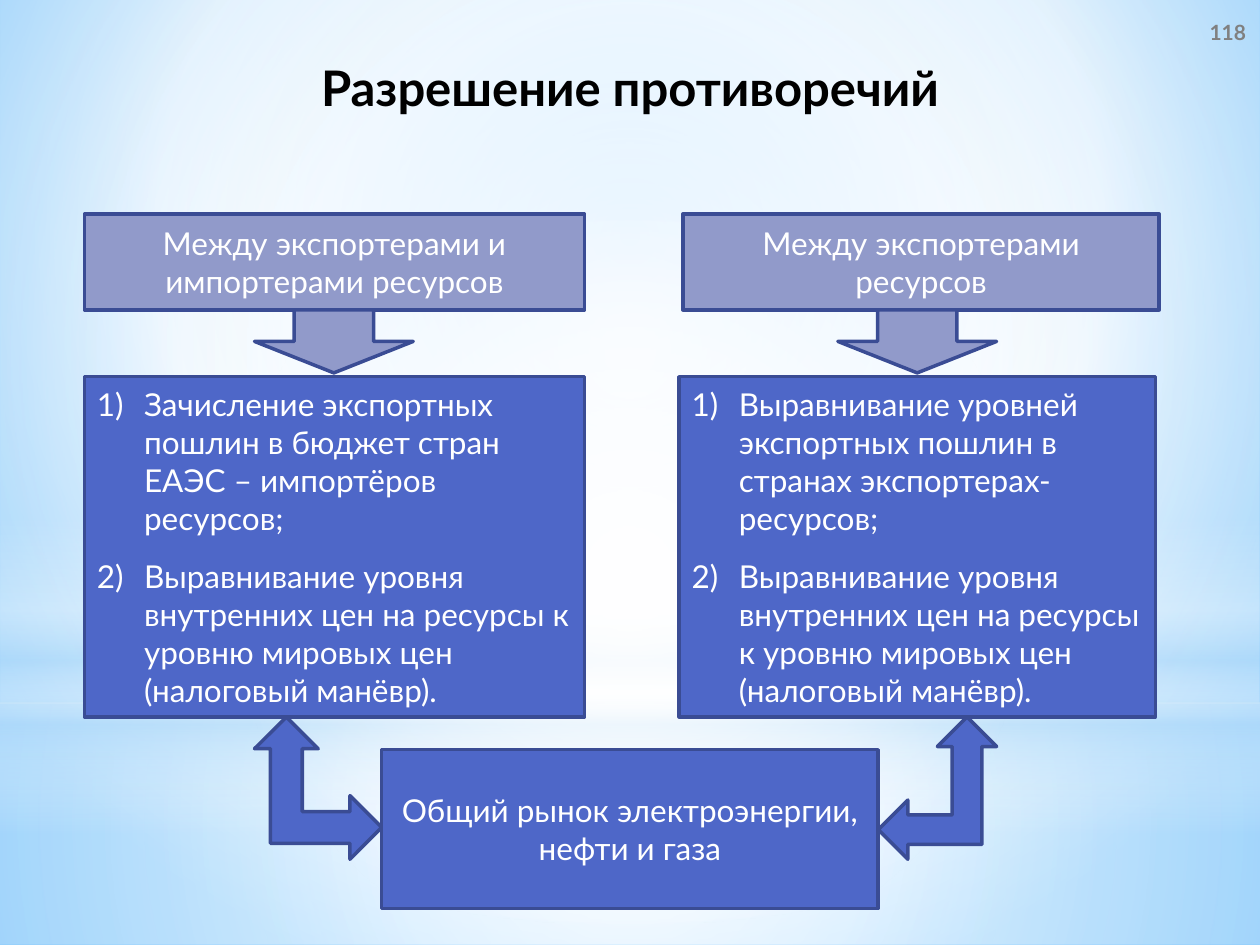
"""Build the slide on resolving contradictions between resource exporters and importers."""
import pptx
import pptx.util
import pptx.dml.color
import pptx.enum.shapes
import pptx.enum.text
import pptx.oxml.ns
from lxml import etree

Pt = pptx.util.Pt
RGBColor = pptx.dml.color.RGBColor
SHAPE = pptx.enum.shapes.MSO_SHAPE
ALIGN = pptx.enum.text.PP_ALIGN
ANCHOR = pptx.enum.text.MSO_ANCHOR
qn = pptx.oxml.ns.qn

WHITE = RGBColor(0xFF, 0xFF, 0xFF)
BLACK = RGBColor(0, 0, 0)
GRAY = RGBColor(0x80, 0x80, 0x80)
BLUE = RGBColor(0x4E, 0x67, 0xC8)
LILAC = RGBColor(0x91, 0x9A, 0xCA)
NAVY = RGBColor(0x3A, 0x4C, 0x94)
PALE = RGBColor(0xB4, 0xDC, 0xFA)
SKY = RGBColor(0x9E, 0xD5, 0xFF)
AZURE = RGBColor(0x5B, 0xB9, 0xFF)

WIDTH, HEIGHT = 720, 540
FONT = "Lato"
CENTER_FOCUS = (50, 50, 50, 50)

BACKDROP = [(0, SKY, 100), (60, WHITE, 100), (100, AZURE, 100)]
GLOWS = [
    (SHAPE.RECTANGLE, 401.76, 138.24, CENTER_FOCUS,
     [(0, WHITE, 91), (37, WHITE, 76), (100, PALE, 79)]),
    (SHAPE.RECTANGLE, 0, 401.76, CENTER_FOCUS,
     [(0, WHITE, 89), (48, WHITE, 62), (100, PALE, 79)]),
    (SHAPE.RECTANGLE, 296.64, 180, None,
     [(0, WHITE, 0), (29, WHITE, 30), (45, PALE, 40),
      (55, WHITE, 26), (65, PALE, 60), (100, WHITE, 0)]),
    (SHAPE.OVAL, 126, 401.76, CENTER_FOCUS, [(0, WHITE, 100), (56, WHITE, 0)]),
]

TITLE = "Разрешение противоречий"
PAGE_NUMBER = "118"
PRICES = "Выравнивание уровня внутренних цен на ресурсы к уровню мировых цен (налоговый манёвр)."
COLUMNS = [
    {"heading": "Между экспортерами и импортерами ресурсов",
     "measures": ["Зачисление экспортных пошлин в бюджет стран ЕАЭС – импортёров ресурсов;", PRICES],
     "heading_left": 48.24, "measures_left": 48.24, "width": 285.84, "arrow_left": 145.44},
    {"heading": "Между экспортерами ресурсов",
     "measures": ["Выравнивание уровней экспортных пошлин в странах экспортерах-ресурсов;", PRICES],
     "heading_left": 390.24, "measures_left": 388.08, "width": 272.16, "arrow_left": 478.8},
]
RESULT = "Общий рынок электроэнергии, нефти и газа"

HEADING_TOP, HEADING_HEIGHT = 122.4, 54.72
ARROW_WIDTH, ARROW_HEIGHT = 90.72, 36
MEASURES_TOP, MEASURES_HEIGHT = 215.28, 194.4
RESULT_AREA = (218.16, 428.4, 283.68, 90.72)
BENT_ARROWS = [((501.84, 409.68, 67.68, 81.36), 0), ((141.12, 414, 81.36, 72.72), 90)]


def apply_gradient(fill, element, stops, focus):
    fill.gradient()
    gradient = next(element.iter(qn("a:gradFill")))
    for child in list(gradient):
        gradient.remove(child)
    stop_list = etree.SubElement(gradient, qn("a:gsLst"))
    for position, color, opacity in stops:
        stop = etree.SubElement(stop_list, qn("a:gs"), pos=str(position * 1000))
        tint = etree.SubElement(stop, qn("a:srgbClr"), val=str(color))
        if opacity < 100:
            etree.SubElement(tint, qn("a:alpha"), val=str(opacity * 1000))
    if focus:
        shade = etree.SubElement(gradient, qn("a:path"), path="circle")
        sides = {side: str(share * 1000) for side, share in zip("ltrb", focus)}
        etree.SubElement(shade, qn("a:fillToRect"), **sides)
    else:
        etree.SubElement(gradient, qn("a:lin"), ang="5400000", scaled="0")


def write(box, texts, size=18, color=WHITE, bold=False, align=ALIGN.CENTER,
          anchor=ANCHOR.MIDDLE, after=0, numbered=False):
    frame = box.text_frame
    frame.word_wrap = True
    frame.vertical_anchor = anchor
    for index, text in enumerate(texts):
        para = frame.add_paragraph() if index else frame.paragraphs[0]
        para.alignment = align
        para.space_after = Pt(after)
        if numbered:
            properties = para._p.get_or_add_pPr()
            properties.set("marL", str(Pt(27)))
            properties.set("indent", str(Pt(-27)))
            etree.SubElement(properties, qn("a:buFont"), typeface=FONT)
            etree.SubElement(properties, qn("a:buAutoNum"), type="arabicParenR")
        span = para.add_run()
        span.text = text
        span.font.name = FONT
        span.font.size = Pt(size)
        span.font.bold = bold
        span.font.color.rgb = color


def add_shape(page, kind, area, color=None):
    shape = page.shapes.add_shape(kind, *map(Pt, area))
    shape.shadow.inherit = False
    if color is None:
        shape.line.fill.background()
    else:
        shape.fill.solid()
        shape.fill.fore_color.rgb = color
        shape.line.color.rgb = NAVY
        shape.line.width = Pt(2)
    return shape


def main():
    deck = pptx.Presentation()
    deck.slide_width, deck.slide_height = Pt(WIDTH), Pt(HEIGHT)
    page = deck.slides.add_slide(deck.slide_layouts[6])
    apply_gradient(page.background.fill, page.element, BACKDROP, (20, 10, 20, 60))
    for kind, top, height, focus, stops in GLOWS:
        glow = add_shape(page, kind, (0, top, WIDTH, height))
        apply_gradient(glow.fill, glow.element, stops, focus)

    title = page.shapes.add_textbox(Pt(8.64), Pt(29.52), Pt(702.72), Pt(41.04))
    write(title, [TITLE], size=28, color=BLACK, bold=True, anchor=ANCHOR.TOP)
    number = page.shapes.add_textbox(Pt(683.28), Pt(0), Pt(36.72), Pt(36.72))
    number.text_frame.margin_left = number.text_frame.margin_right = 0
    write(number, [PAGE_NUMBER], size=12, color=GRAY, bold=True)

    for column in COLUMNS:
        measures = add_shape(page, SHAPE.RECTANGLE, (
            column["measures_left"], MEASURES_TOP, column["width"], MEASURES_HEIGHT), BLUE)
        write(measures, column["measures"], align=ALIGN.LEFT, after=12, numbered=True)
        heading = add_shape(page, SHAPE.RECTANGLE, (
            column["heading_left"], HEADING_TOP, column["width"], HEADING_HEIGHT), LILAC)
        write(heading, [column["heading"]])
        add_shape(page, SHAPE.DOWN_ARROW, (
            column["arrow_left"], HEADING_TOP + HEADING_HEIGHT, ARROW_WIDTH, ARROW_HEIGHT), LILAC)

    for area, rotation in BENT_ARROWS:
        add_shape(page, SHAPE.LEFT_UP_ARROW, area, BLUE).rotation = rotation
    write(add_shape(page, SHAPE.RECTANGLE, RESULT_AREA, BLUE), [RESULT], after=12)
    deck.save("out.pptx")


if __name__ == "__main__":
    main()
